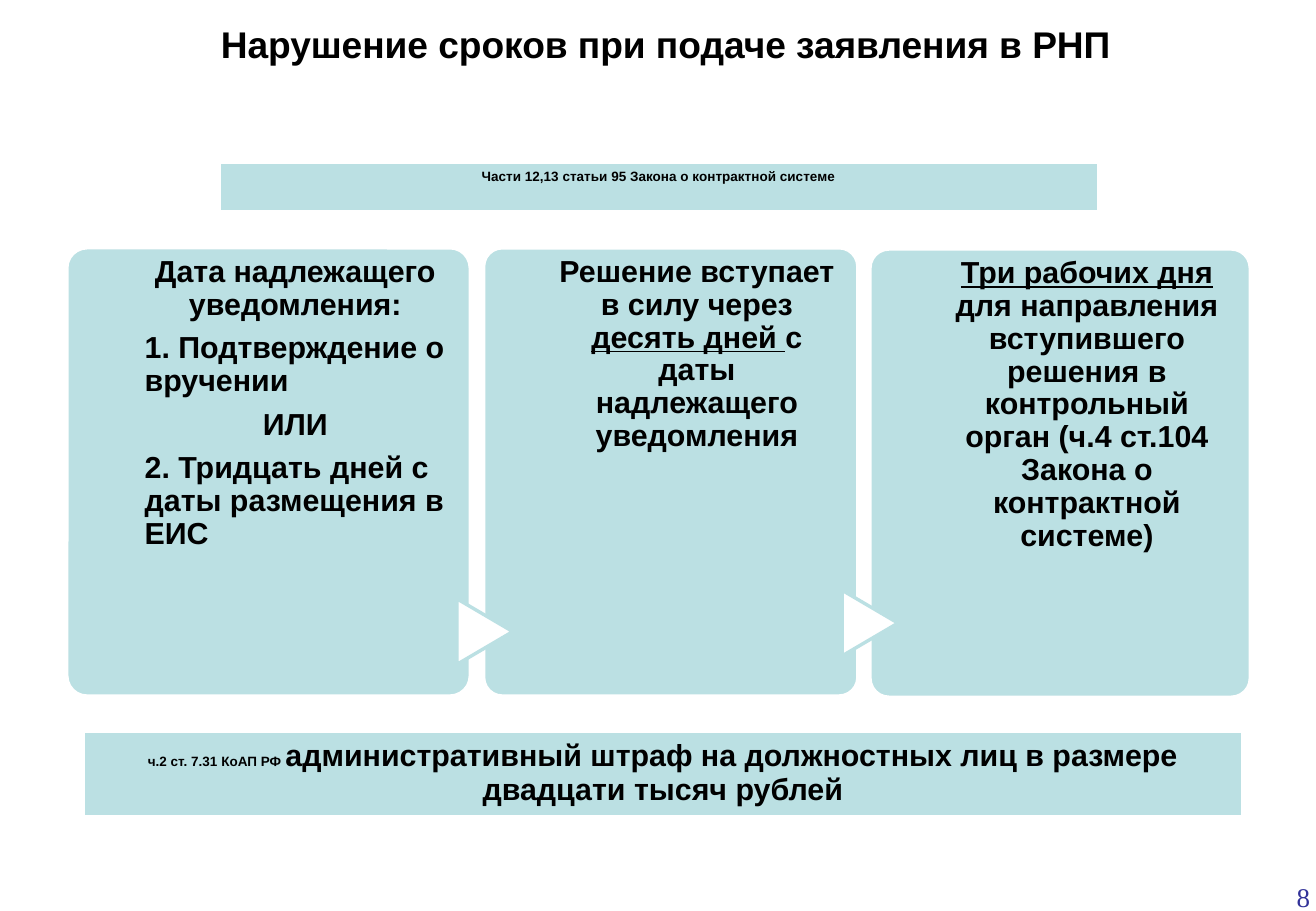
import pptx
import pptx.util
import pptx.dml.color
import pptx.enum.shapes
import pptx.enum.text
import pptx.oxml
import pptx.oxml.ns
from pptx.util import Inches

SHAPE = pptx.enum.shapes.MSO_SHAPE
ALIGN = pptx.enum.text.PP_ALIGN
ANCHOR = pptx.enum.text.MSO_ANCHOR


def tint(code):
    return pptx.dml.color.RGBColor.from_string(code)


class Deck:
    aqua = "BBE0E3"
    white = "FFFFFF"
    black = "000000"

    def __init__(self, wide, high):
        self.file = pptx.Presentation()
        self.file.slide_width = Inches(wide)
        self.file.slide_height = Inches(high)
        self.slide = self.file.slides.add_slide(self.file.slide_layouts[6])

    def fill_para(self, para, parts, align, size=18, font="Arial", color=black, bold=True):
        para.alignment = align
        for part in parts:
            words, style = part if isinstance(part, tuple) else (part, {})
            run = para.add_run()
            run.text = words
            run.font.name = font
            run.font.size = pptx.util.Pt(style.get("size", size))
            run.font.bold = bold
            run.font.underline = style.get("under", False)
            run.font.color.rgb = tint(color)

    def shape(self, kind, left, top, wide, high, fill, line):
        item = self.slide.shapes.add_shape(
            kind, Inches(left), Inches(top), Inches(wide), Inches(high))
        item.shadow.inherit = False
        item.fill.solid()
        item.fill.fore_color.rgb = tint(fill)
        item.line.color.rgb = tint(line)
        item.line.width = pptx.util.Pt(2)
        return item

    def text(self, left, top, wide, high):
        box = self.slide.shapes.add_textbox(
            Inches(left), Inches(top), Inches(wide), Inches(high))
        box.text_frame.word_wrap = True
        return box.text_frame

    def label(self, left, top, wide, high, words, align, anchor, **style):
        frame = self.text(left, top, wide, high)
        frame.vertical_anchor = anchor
        self.fill_para(frame.paragraphs[0], [words], align, **style)

    def card(self, left, top, wide, inner, span, paras):
        high = 3.69
        body = self.shape(SHAPE.ROUNDED_RECTANGLE, left, top, wide, high, self.aqua, self.white)
        body.adjustments[0] = 0.05
        frame = self.text(inner, top, span, high)
        frame.margin_left = frame.margin_right = frame.margin_bottom = 0
        frame.margin_top = Inches(0.07)
        for i, (align, parts) in enumerate(paras):
            para = frame.add_paragraph() if i else frame.paragraphs[0]
            self.fill_para(para, parts, align)
            para.line_spacing = 0.9
            para.space_after = pptx.util.Pt(6.3)

    def arrow(self, left, top):
        item = self.shape(SHAPE.FLOWCHART_EXTRACT, left, top, 0.54, 0.46, self.white, self.aqua)
        item.rotation = 90

    def band(self, left, top, wide, parts):
        high = Inches(0.41)
        table = self.slide.shapes.add_table(
            1, 1, Inches(left), Inches(top), Inches(wide), high).table
        table.horz_banding = False
        cell = table.cell(0, 0)
        self.fill_para(cell.text_frame.paragraphs[0], parts, ALIGN.CENTER)
        props = cell._tc.get_or_add_tcPr()
        for side, width in (("L", 1), ("R", 1), ("T", 1), ("B", 3)):
            props.append(pptx.oxml.parse_xml(
                f'<a:ln{side} {pptx.oxml.ns.nsdecls("a")} w="{width * 12700}">'
                f'<a:solidFill><a:srgbClr val="{self.white}"/></a:solidFill></a:ln{side}>'))
        cell.fill.solid()
        cell.fill.fore_color.rgb = tint(self.aqua)


def main():
    deck = Deck(10.83, 7.5)
    mid, left = ALIGN.CENTER, ALIGN.LEFT
    under, small = {"under": True}, {"size": 8}

    deck.card(0.55, 2.04, 3.32, 1.19, 2.48, [
        (mid, ["Дата надлежащего уведомления:"]),
        (left, ["1. Подтверждение о вручении"]),
        (mid, ["ИЛИ"]),
        (left, ["2. Тридцать дней с даты размещения в ЕИС"]),
    ])
    deck.card(3.98, 2.04, 3.08, 4.59, 2.29, [
        (mid, ["Решение вступает в силу через ", ("десять дней ", under),
               "с даты надлежащего уведомления"]),
    ])
    deck.card(7.16, 2.05, 3.13, 7.78, 2.33, [
        (mid, [("Три рабочих дня ", under),
               "для направления вступившего решения в контрольный орган "
               "(ч.4 ст.104 Закона о контрактной системе)"]),
    ])
    deck.arrow(3.72, 4.97)
    deck.arrow(6.89, 4.9)

    deck.label(8.35, 7.2, 2.53, 0.33, "8", ALIGN.RIGHT, ANCHOR.TOP,
               size=16, font="Times New Roman", color="333399", bold=False)
    deck.label(0.16, -0.03, 10.64, 0.62, "Нарушение сроков при подаче заявления в РНП",
               mid, ANCHOR.BOTTOM, size=22)

    deck.band(1.81, 1.34, 7.22, [("Части 12,13 статьи 95 Закона о контрактной системе", small)])
    deck.band(0.69, 6.03, 9.53, [
        ("ч.2 ст. 7.31 КоАП РФ ", small),
        "административный штраф на должностных лиц в размере двадцати тысяч рублей",
    ])
    deck.file.save("out.pptx")


if __name__ == "__main__":
    main()
